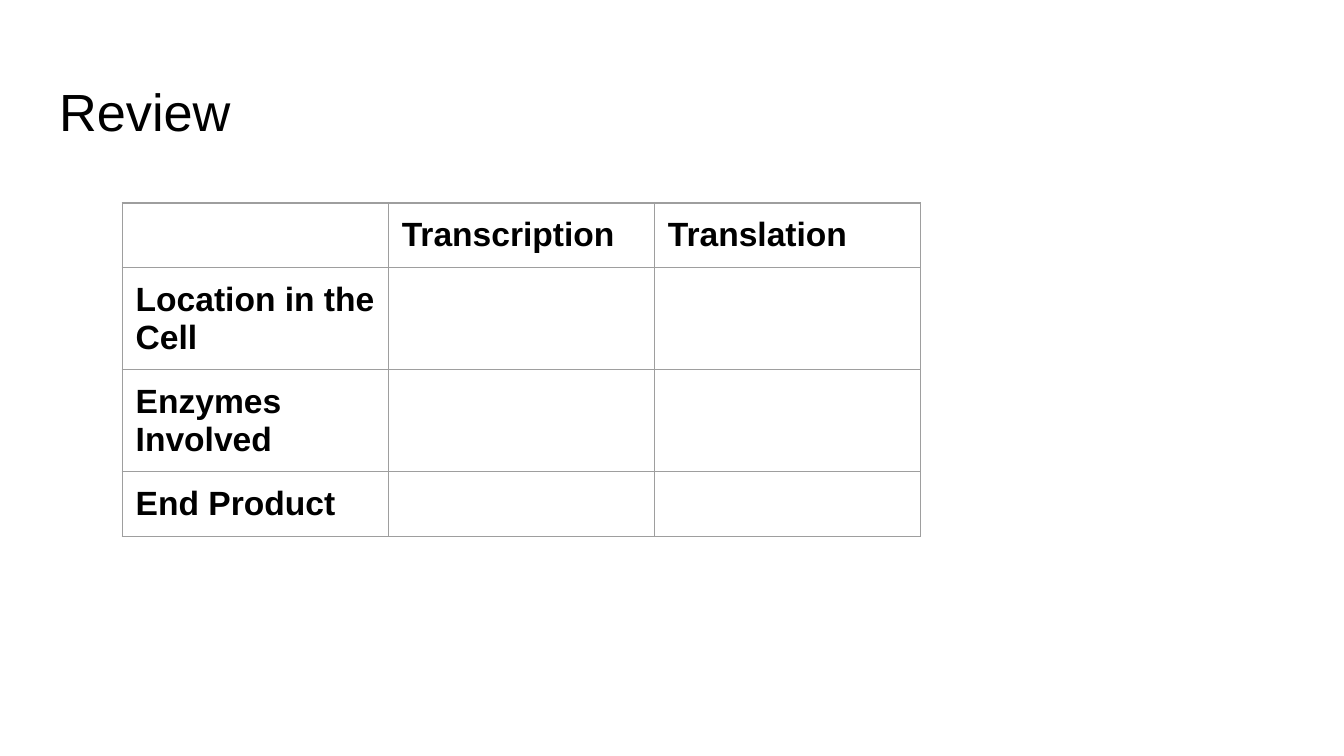
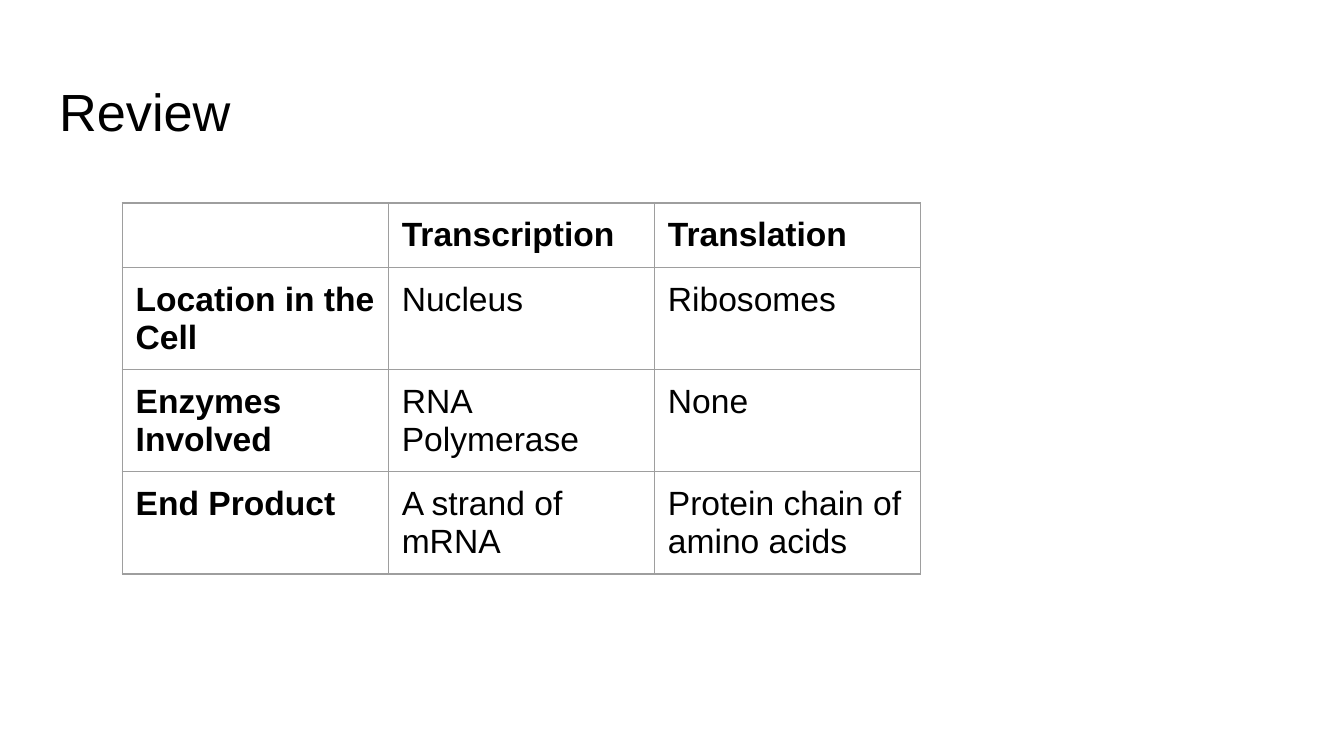
from dataclasses import dataclass

from lxml import etree
from pptx import Presentation
from pptx.dml.color import RGBColor
from pptx.enum.text import MSO_ANCHOR, PP_ALIGN
from pptx.oxml.ns import qn
from pptx.util import Inches, Pt

LEFT, TOP = PP_ALIGN.LEFT, MSO_ANCHOR.TOP
WIDE = Inches(10)
HIGH = WIDE * 9 // 16


@dataclass(frozen=True)
class Theme:
    font: str = "Arial"
    ink: str = "000000"
    rule: str = "9E9E9E"
    paper: str = "FFFFFF"
    title: int = 28
    body: int = 18
    line: float = 0.75
    pad: float = 0.1


THEME = Theme()

# Boxes: left, top, width, height in inches
HEAD_BOX = (0.34, 0.49, 9.32, 0.63)
GRID_BOX = (0.91, 1.51, 5.94, 1.68)

TOPICS = ["Transcription", "Translation"]
ASPECTS = ["Location in the Cell", "Enzymes Involved", "End Product"]
ANSWERS = [
    ["Nucleus", "Ribosomes"],
    ["RNA Polymerase", "None"],
    ["A strand of mRNA", "Protein chain of amino acids"],
]
BLANKS = [["", ""] for _ in ASPECTS]


def style(para, size, bold=False):
    para.alignment = LEFT
    for run in para.runs:
        font = run.font
        font.name, font.size, font.bold = THEME.font, Pt(size), bold
        font.color.rgb = RGBColor.from_string(THEME.ink)
    if not para.runs:
        # An empty cell keeps the line height of the body text
        end = etree.SubElement(para._p, qn("a:endParaRPr"), sz=str(size * 100))
        etree.SubElement(end, qn("a:latin"), typeface=THEME.font)


def set_pads(part):
    part.margin_left = part.margin_right = Inches(THEME.pad)
    part.margin_top = part.margin_bottom = Inches(THEME.pad)
    part.vertical_anchor = TOP


def add_title(slide, text, box):
    shape = slide.shapes.title
    shape.left, shape.top, shape.width, shape.height = map(Inches, box)
    frame = shape.text_frame
    frame.text = text
    frame.word_wrap = True
    set_pads(frame)
    style(frame.paragraphs[0], THEME.title)


def add_rules(cell):
    props = cell._tc.get_or_add_tcPr()
    for spot, side in enumerate("LRTB"):
        line = etree.Element(qn(f"a:ln{side}"), w=str(Pt(THEME.line)))
        fill = etree.SubElement(line, qn("a:solidFill"))
        etree.SubElement(fill, qn("a:srgbClr"), val=THEME.rule)
        props.insert(spot, line)


def fill_cell(cell, text, bold):
    cell.text = text
    cell.fill.background()
    set_pads(cell)
    style(cell.text_frame.paragraphs[0], THEME.body, bold)
    add_rules(cell)


def add_grid(slide, answers, box):
    rows = [["", *TOPICS]]
    rows += [[name, *row] for name, row in zip(ASPECTS, answers)]
    table = slide.shapes.add_table(len(rows), len(rows[0]), *map(Inches, box)).table
    table.first_row = table.horz_banding = False
    for r, row in enumerate(rows):
        for c, text in enumerate(row):
            fill_cell(table.cell(r, c), text, bold=r == 0 or c == 0)


def add_review(deck, answers):
    slide = deck.slides.add_slide(deck.slide_layouts[5])
    back = slide.background.fill
    back.solid()
    back.fore_color.rgb = RGBColor.from_string(THEME.paper)
    add_title(slide, "Review", HEAD_BOX)
    add_grid(slide, answers, GRID_BOX)


def main():
    deck = Presentation()
    deck.slide_width, deck.slide_height = WIDE, HIGH
    # Questions first, then the answers
    for answers in (BLANKS, ANSWERS):
        add_review(deck, answers)
    deck.save("out.pptx")


if __name__ == "__main__":
    main()
